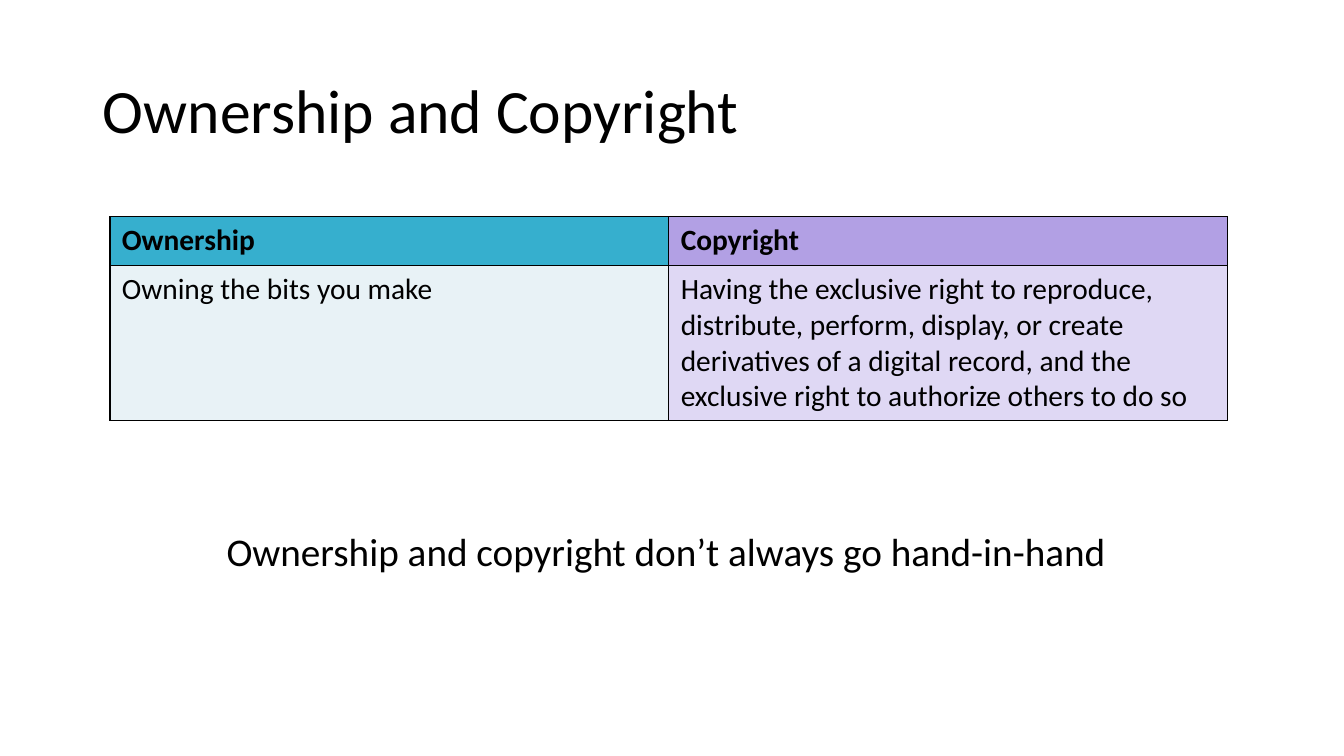
"""Build the slide that sets ownership beside copyright."""
from dataclasses import dataclass

from lxml import etree
from pptx import Presentation, util as u
from pptx.dml.color import RGBColor
from pptx.enum import text as t
from pptx.oxml import ns


@dataclass(frozen=True)
class Theme:
    """Fonts, colours and type sizes."""
    font: str = "Calibri"
    ink: str = "000000"
    title: float = 44
    cell: float = 21
    note: float = 28
    rule: float = 1


@dataclass(frozen=True)
class Box:
    """A place on the slide in centimetres."""
    left: float
    top: float
    width: float
    height: float

    def spans(self) -> list[u.Cm]:
        """Return the four lengths."""
        return [u.Cm(n) for n in (self.left, self.top, self.width, self.height)]


@dataclass(frozen=True)
class Column:
    """A table column with its head, body and fills."""
    head: str
    body: str
    dark: str
    light: str


THEME = Theme()
HEIGHTS = (1.22, 3.86)
COLUMNS = (
    Column("Ownership", "Owning the bits you make", "36AFCE", "E8F2F6"),
    Column("Copyright",
           "Having the exclusive right to reproduce, distribute, perform, display, "
           "or create derivatives of a digital record, and the exclusive right to "
           "authorize others to do so", "B2A0E4", "DFD8F4"),
)


def write(frame, words: str, size: float, align=t.PP_ALIGN.LEFT, bold: bool = False) -> None:
    """Set one styled paragraph in a text frame."""
    frame.word_wrap = True
    frame.text = words
    para = frame.paragraphs[0]
    para.alignment = align
    font = para.runs[0].font
    font.name, font.size, font.bold = THEME.font, u.Pt(size), bold
    font.color.rgb = RGBColor.from_string(THEME.ink)


def edge(cell) -> None:
    """Draw the four borders of a cell."""
    props = cell._tc.get_or_add_tcPr()
    for spot, side in enumerate(("lnL", "lnR", "lnT", "lnB")):
        line = etree.Element(ns.qn(f"a:{side}"), w=str(u.Pt(THEME.rule)))
        fill = etree.SubElement(line, ns.qn("a:solidFill"))
        etree.SubElement(fill, ns.qn("a:srgbClr"), val=THEME.ink)
        props.insert(spot, line)


def paint(cell, words: str, tint: str, bold: bool) -> None:
    """Fill, frame and label a cell."""
    write(cell.text_frame, words, THEME.cell, bold=bold)
    cell.margin_left = cell.margin_right = u.Cm(0.3)
    cell.margin_top = cell.margin_bottom = u.Cm(0.15)
    cell.fill.solid()
    cell.fill.fore_color.rgb = RGBColor.from_string(tint)
    edge(cell)


def chart(slide, box: Box) -> None:
    """Add the table of both terms."""
    grid = slide.shapes.add_table(len(HEIGHTS), len(COLUMNS), *box.spans()).table
    for row, tall in zip(grid.rows, HEIGHTS):
        row.height = u.Cm(tall)
    for num, col in enumerate(COLUMNS):
        paint(grid.cell(0, num), col.head, col.dark, True)
        paint(grid.cell(1, num), col.body, col.light, False)


def main() -> None:
    """Build and save the slide."""
    deck = Presentation()
    deck.slide_width, deck.slide_height = u.Inches(13.33), u.Inches(7.5)
    slide = deck.slides.add_slide(deck.slide_layouts[5])
    title = slide.shapes.title
    title.left, title.top, title.width, title.height = Box(2.34, 1.02, 29.21, 3.68).spans()
    frame = title.text_frame
    write(frame, "Ownership and Copyright", THEME.title)
    frame.vertical_anchor = t.MSO_ANCHOR.MIDDLE
    frame.auto_size = t.MSO_AUTO_SIZE.NONE
    frame.paragraphs[0].line_spacing = 0.9
    chart(slide, Box(2.77, 5.46, 28.16, sum(HEIGHTS)))
    note = slide.shapes.add_textbox(*Box(2.59, 13.16, 28.37, 1.45).spans()).text_frame
    write(note, "Ownership and copyright don’t always go hand-in-hand", THEME.note, t.PP_ALIGN.CENTER)
    note.auto_size = t.MSO_AUTO_SIZE.SHAPE_TO_FIT_TEXT
    deck.save("out.pptx")


if __name__ == "__main__":
    main()
